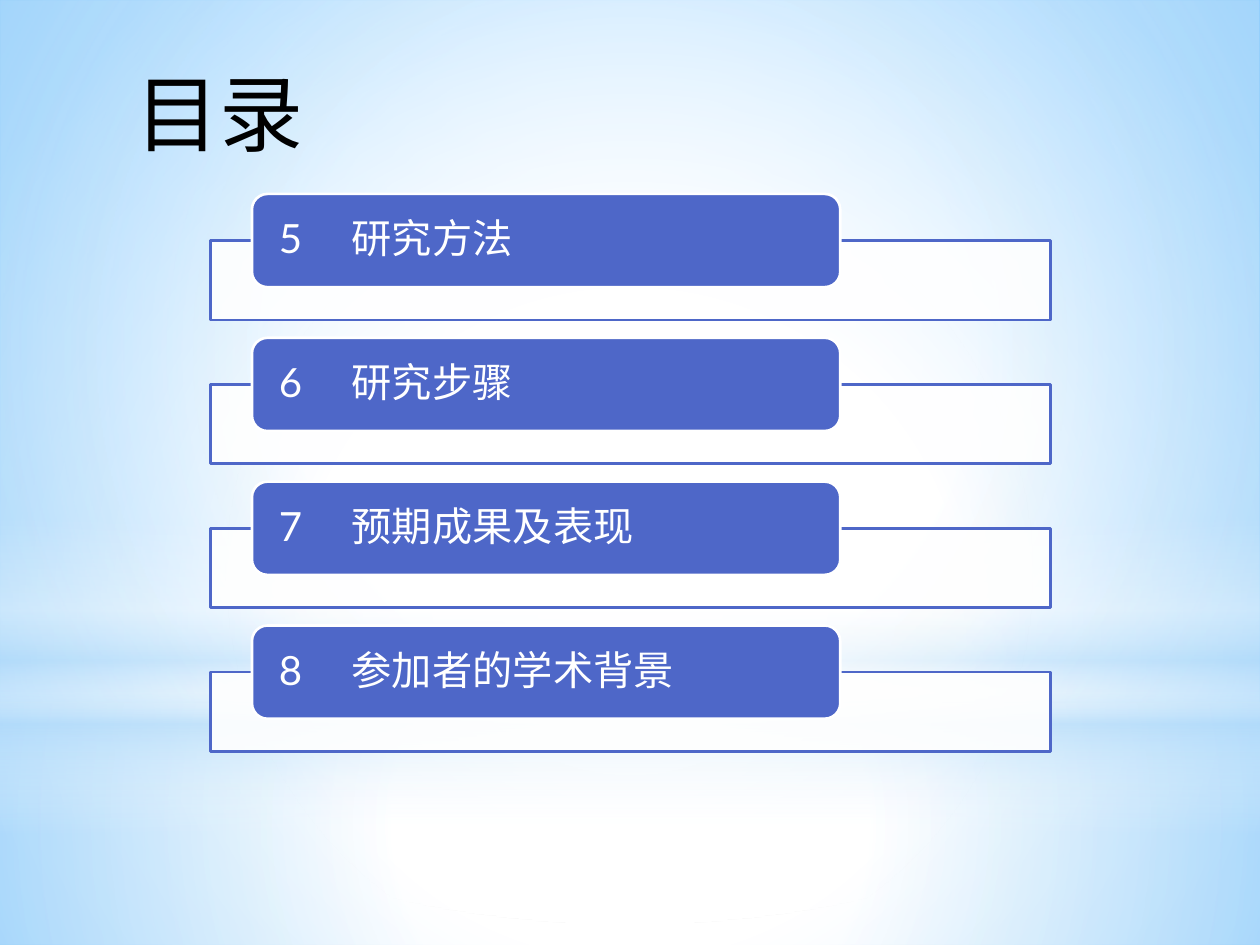
from dataclasses import dataclass
from typing import Any

from lxml import etree
from pptx import Presentation
from pptx import util as u
from pptx.dml.color import RGBColor
from pptx.enum import shapes, text
from pptx.oxml.ns import qn

WHITE = RGBColor(0xFF, 0xFF, 0xFF)
BLACK = RGBColor(0x00, 0x00, 0x00)
INDIGO = RGBColor(0x4E, 0x67, 0xC8)
PALE = RGBColor(0xB4, 0xDC, 0xFA)
SKY = RGBColor(0x63, 0xBC, 0xFF)
CENTRE = (50, 50, 50, 50)
TOPICS = ["研究方法", "研究步骤", "预期成果及表现", "参加者的学术背景"]
FIRST_NUMBER = 5
ROW_PITCH = 2.9


@dataclass
class ContentsSlide:
    """Draws the elements of a contents page in one style."""

    slide: Any
    font: str = "Lato"
    outline: float = 1.5

    def set_gradient(self, fill, element, stops, focus=None):
        fill.gradient()
        gradient = element.find(".//" + qn("a:gradFill"))
        for child in list(gradient):
            gradient.remove(child)
        gradient.set("rotWithShape", "1")
        stop_list = etree.SubElement(gradient, qn("a:gsLst"))
        for position, color, opacity in stops:
            stop = etree.SubElement(stop_list, qn("a:gs"), pos=str(position * 1000))
            value = etree.SubElement(stop, qn("a:srgbClr"), val=str(color))
            self.set_opacity(value, opacity)
        if focus:
            circle = etree.SubElement(gradient, qn("a:path"), path="circle")
            sides = {side: str(value * 1000) for side, value in zip("ltrb", focus)}
            etree.SubElement(circle, qn("a:fillToRect"), **sides)
        else:
            etree.SubElement(gradient, qn("a:lin"), ang="5400000", scaled="0")

    def set_opacity(self, color, opacity):
        if opacity < 100:
            etree.SubElement(color, qn("a:alpha"), val=str(opacity * 1000))

    def background(self, stops, focus):
        self.set_gradient(self.slide.background.fill, self.slide.element, stops, focus)

    def preset(self, kind, left, top, width, height):
        shape = self.slide.shapes.add_shape(
            kind, u.Cm(left), u.Cm(top), u.Cm(width), u.Cm(height))
        shape.shadow.inherit = False
        return shape

    def glow(self, kind, top, height, stops, focus=None):
        layer = self.preset(kind, 0, top, 25.4, height)
        layer.line.fill.background()
        self.set_gradient(layer.fill, layer.element, stops, focus)

    def panel(self, kind, box, fill, line, opacity=100):
        panel = self.preset(kind, *box)
        panel.fill.solid()
        panel.fill.fore_color.rgb = fill
        self.set_opacity(panel.element.spPr.find(qn("a:solidFill"))[0], opacity)
        panel.line.color.rgb = line
        panel.line.width = u.Pt(self.outline)
        return panel

    def add_words(self, paragraph, words, size, color):
        run = paragraph.add_run()
        run.text = words
        run.font.name = self.font
        run.font.size = u.Pt(size)
        run.font.color.rgb = color

    def entry(self, top, number, topic):
        self.panel(shapes.MSO_SHAPE.RECTANGLE, (4.24, top + 0.94, 16.94, 1.6),
                   WHITE, INDIGO, 90)
        label = self.panel(shapes.MSO_SHAPE.ROUNDED_RECTANGLE,
                           (5.08, top, 11.86, 1.88), INDIGO, WHITE)
        frame = label.text_frame
        frame.word_wrap = True
        frame.vertical_anchor = text.MSO_ANCHOR.MIDDLE
        frame.margin_left = frame.margin_right = u.Cm(0.45)
        frame.margin_top = frame.margin_bottom = 0
        paragraph = frame.paragraphs[0]
        paragraph.alignment = text.PP_ALIGN.LEFT
        paragraph.line_spacing = 0.9
        tabs = etree.SubElement(paragraph._p.get_or_add_pPr(), qn("a:tabLst"))
        etree.SubElement(tabs, qn("a:tab"), pos=str(u.Cm(1.47)), algn="l")
        self.add_words(paragraph, f"{number}\t", 23, WHITE)
        self.add_words(paragraph, topic, 23, WHITE)

    def title(self, words):
        box = self.slide.shapes.add_textbox(
            u.Cm(2.49), u.Cm(1.12), u.Cm(9.19), u.Cm(2.31))
        box.text_frame.word_wrap = True
        box.text_frame.auto_size = text.MSO_AUTO_SIZE.SHAPE_TO_FIT_TEXT
        self.add_words(box.text_frame.paragraphs[0], words, 48, BLACK)


def main():
    deck = Presentation()
    deck.slide_width, deck.slide_height = u.Cm(25.4), u.Cm(19.05)
    page = ContentsSlide(deck.slides.add_slide(deck.slide_layouts[6]))

    page.background([(0, WHITE, 100), (42, WHITE, 100), (100, SKY, 100)],
                    (24, 44, 24, 12))
    rectangle, oval = shapes.MSO_SHAPE.RECTANGLE, shapes.MSO_SHAPE.OVAL
    page.glow(rectangle, 14.17, 4.88,
              [(0, WHITE, 91), (37, WHITE, 76), (100, PALE, 79)], CENTRE)
    page.glow(rectangle, 0, 14.17,
              [(0, WHITE, 89), (48, WHITE, 62), (100, PALE, 79)], CENTRE)
    page.glow(rectangle, 10.46, 6.35,
              [(0, WHITE, 0), (29, WHITE, 30), (45, PALE, 40),
               (55, WHITE, 26), (65, PALE, 60), (100, WHITE, 0)])
    page.glow(oval, 4.45, 14.17, [(0, WHITE, 100), (56, WHITE, 0)], CENTRE)

    for row, topic in enumerate(TOPICS):
        page.entry(3.91 + row * ROW_PITCH, FIRST_NUMBER + row, topic)
    page.title("目录")
    deck.save("out.pptx")


if __name__ == "__main__":
    main()
